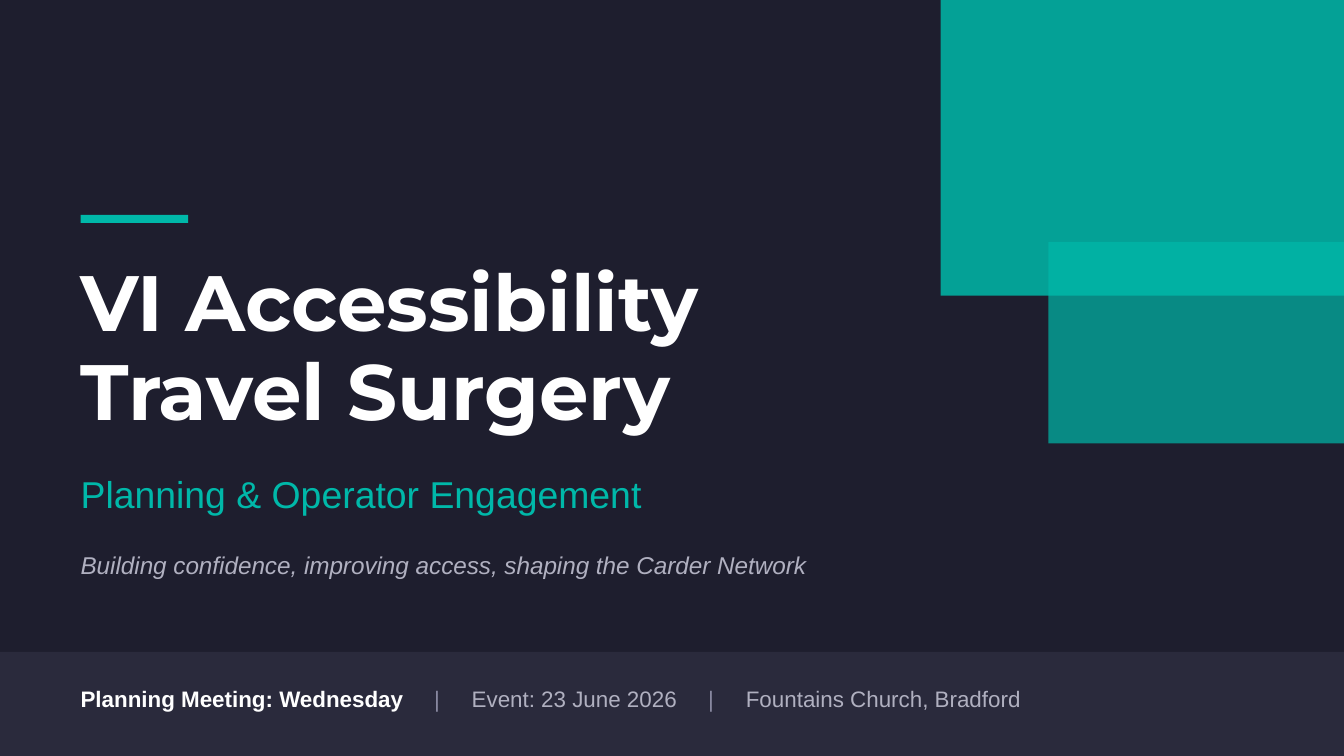
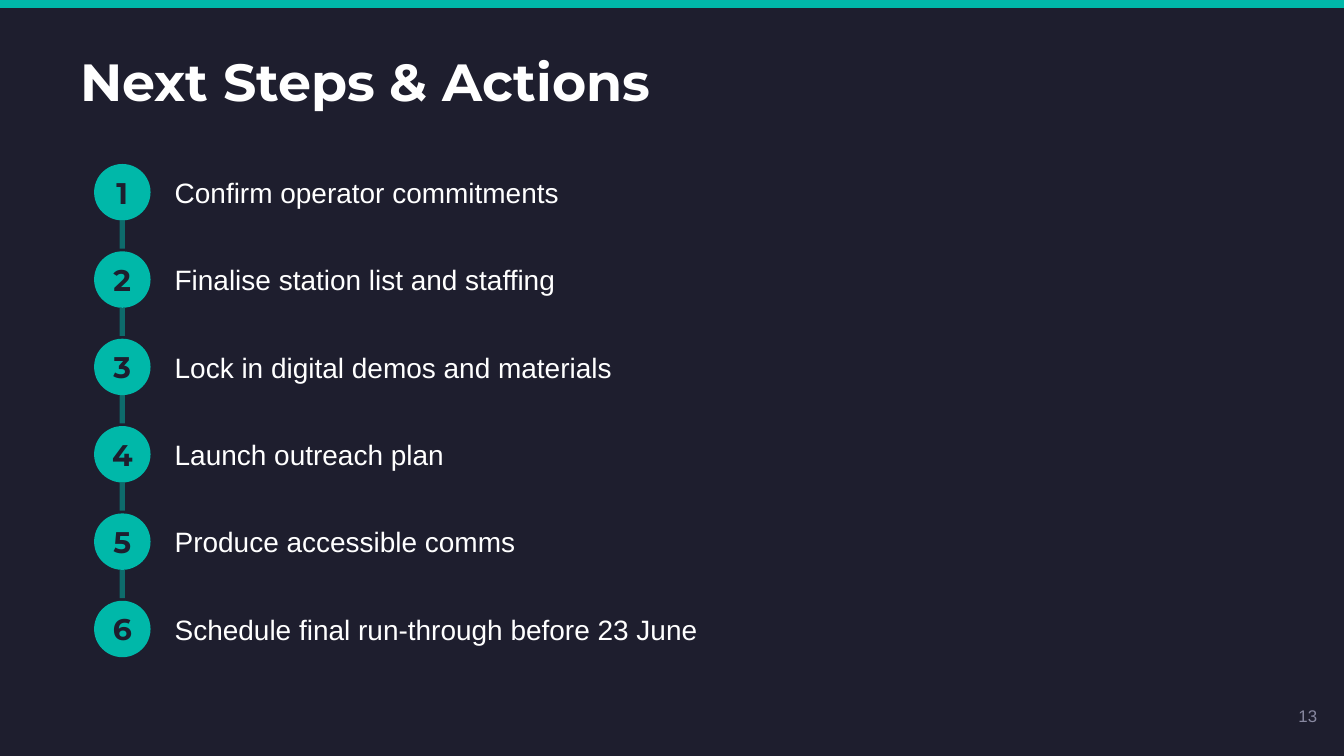
"""Builds the title and next-steps slides of a travel surgery deck."""
from lxml.etree import SubElement as Sub
from pptx import Presentation
from pptx.dml.color import RGBColor
from pptx.enum.shapes import MSO_SHAPE as Kind
from pptx.enum.text import MSO_ANCHOR as Anchor, PP_ALIGN as Align
from pptx.oxml.ns import qn
from pptx.util import Inches, Pt

TEAL, DARK, BAND = "00B8A9", "1E1E2E", "2A2A3C"
WHITE, SOFT, GREY = "FFFFFF", "B0B0C0", "8888A0"
HEAD, BODY = "Montserrat", "Arial"
WIDE, LEFT = 10, 0.6
HIGH = WIDE * 9 / 16

TITLE = ["VI Accessibility", "Travel Surgery"]
LEAD = "Planning & Operator Engagement"
MOTTO = "Building confidence, improving access, shaping the Carder Network"
FACTS = [
    ("Planning Meeting: Wednesday", WHITE, True),
    ("\t|\t", GREY, False),
    ("Event: 23 June 2026", SOFT, False),
    ("\t|\t", GREY, False),
    ("Fountains Church, Bradford", SOFT, False),
]
STOPS = [2.63, 2.91, 4.67, 4.95]
STEPS = [
    "Confirm operator commitments",
    "Finalise station list and staffing",
    "Lock in digital demos and materials",
    "Launch outreach plan",
    "Produce accessible comms",
    "Schedule final run-through before 23 June",
]


def rgb(code):
    return RGBColor.from_string(code)


def block(slide, box, color=TEAL, kind=Kind.RECTANGLE, alpha=100):
    shape = slide.shapes.add_shape(kind, *map(Inches, box))
    shape.shadow.inherit = False
    shape.line.fill.background()
    shape.fill.solid()
    shape.fill.fore_color.rgb = rgb(color)
    if alpha < 100:
        tint = shape.fill._xPr.find(".//" + qn("a:srgbClr"))
        Sub(tint, qn("a:alpha"), val=str(alpha * 1000))
    return shape


def write(shape, lines, size, color=WHITE, font=BODY, bold=False, italic=False,
          align=Align.LEFT, space=None, stops=()):
    frame = shape.text_frame
    frame.word_wrap = True
    frame.vertical_anchor = Anchor.MIDDLE
    frame.margin_left = frame.margin_right = 0
    frame.margin_top = frame.margin_bottom = 0
    for num, line in enumerate([lines] if isinstance(lines, str) else lines):
        para = frame.add_paragraph() if num else frame.paragraphs[0]
        para.alignment = align
        if space:
            para.line_spacing = space
        if stops:
            tabs = Sub(para._p.get_or_add_pPr(), qn("a:tabLst"))
            for stop in stops:
                Sub(tabs, qn("a:tab"), pos=str(Inches(stop)), algn="l")
        parts = [(line, color, bold)] if isinstance(line, str) else line
        for words, tone, heavy in parts:
            run = para.add_run()
            run.text = words
            run.font.name, run.font.size = font, Pt(size)
            run.font.bold, run.font.italic = heavy, italic
            run.font.color.rgb = rgb(tone)


def label(slide, box, lines, size, **style):
    write(slide.shapes.add_textbox(*map(Inches, box)), lines, size, **style)


def page(deck):
    slide = deck.slides.add_slide(deck.slide_layouts[6])
    slide.background.fill.solid()
    slide.background.fill.fore_color.rgb = rgb(DARK)
    return slide


def cover(deck):
    slide = page(deck)
    block(slide, (7, 0, 3, 2.2), alpha=85)
    block(slide, (7.8, 1.8, 2.2, 1.5), alpha=70)
    block(slide, (LEFT, 1.6, 0.8, 0.06))
    label(slide, (LEFT, 1.8, 6.5, 1.6), TITLE, 42, font=HEAD, bold=True, space=0.95)
    label(slide, (LEFT, 3.45, 6.5, 0.45), LEAD, 20, color=TEAL)
    label(slide, (LEFT, 4, 6.5, 0.4), MOTTO, 13, color=SOFT, italic=True)
    block(slide, (0, 4.85, WIDE, HIGH - 4.85), BAND)
    label(slide, (LEFT, 4.95, 8.8, 0.5), [FACTS], 12, stops=STOPS)


def actions(deck):
    slide = page(deck)
    block(slide, (0, 0, WIDE, 0.06))
    label(slide, (LEFT, 0.3, 8.8, 0.6), "Next Steps & Actions", 28, font=HEAD, bold=True)
    label(slide, (9.2, 5.15, 0.6, 0.35), "13", 9, color=GREY, align=Align.RIGHT)
    left, top, dot, pitch, bar = 0.7, 1.22, 0.42, 0.65, 0.04
    for num, step in enumerate(STEPS):
        y = top + num * pitch
        disc = block(slide, (left, y, dot, dot), kind=Kind.OVAL)
        write(disc, str(num + 1), 16, color=DARK, font=HEAD, bold=True, align=Align.CENTER)
        label(slide, (1.3, y, 8, dot), step, 15)
        if num < len(STEPS) - 1:
            block(slide, (left + (dot - bar) / 2, y + dot, bar, 0.21), alpha=50)


def main():
    deck = Presentation()
    deck.slide_width, deck.slide_height = Inches(WIDE), Inches(HIGH)
    cover(deck)
    actions(deck)
    deck.save("out.pptx")


if __name__ == "__main__":
    main()
